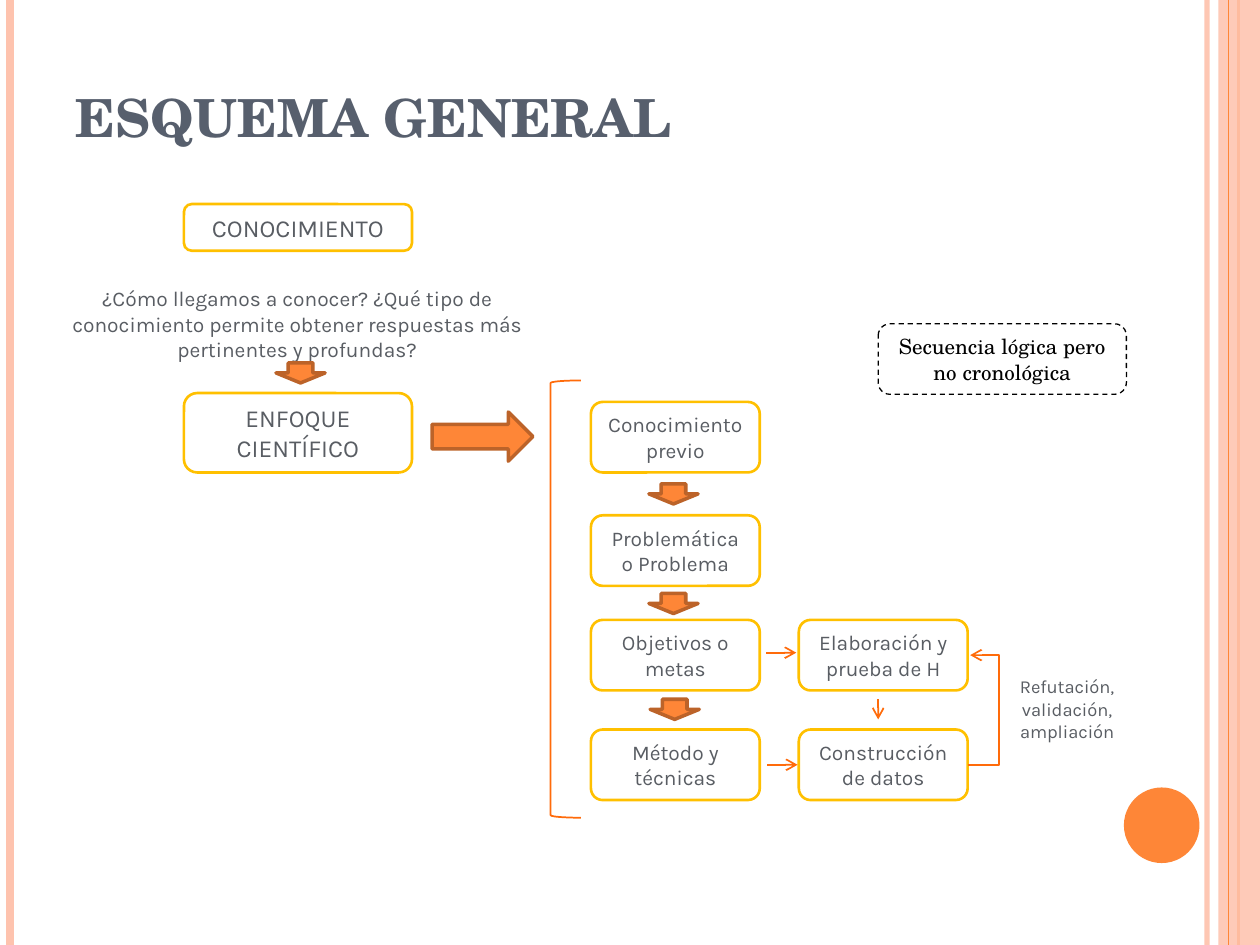
from dataclasses import dataclass
from typing import Optional

import pptx
import pptx.dml.color
import pptx.enum.dml
import pptx.enum.shapes
import pptx.enum.text
import pptx.oxml
import pptx.oxml.ns
import pptx.util

SHAPES = pptx.enum.shapes.MSO_SHAPE
CONNECTORS = pptx.enum.shapes.MSO_CONNECTOR


@dataclass(frozen=True)
class Theme:
    orange: str = "FE8637"
    dark_orange: str = "BC6329"
    bright_orange: str = "FF6B0A"
    peach: str = "FEC3AE"
    gold: str = "FFC000"
    slate: str = "575F6D"
    gray: str = "595D63"
    black: str = "000000"
    sans: str = "Karla"
    serif: str = "TeX Gyre Schola"
    title: float = 30
    large: float = 14
    body: float = 12
    small: float = 10.5


THEME = Theme()
# The grid has 100 columns and 75 rows
COLUMNS, ROWS = 100, 75
WIDTH, HEIGHT = pptx.util.Inches(10), pptx.util.Inches(7.5)


@dataclass(frozen=True)
class Area:
    column: float
    row: float
    columns: float
    rows: float


@dataclass(frozen=True)
class Label:
    text: str
    area: Area
    size: float = THEME.body
    outline: Optional[str] = THEME.gold
    weight: float = 1.5
    dashed: bool = False
    font: str = THEME.sans
    color: str = THEME.gray


@dataclass(frozen=True)
class Rail:
    column: float
    color: str
    weight: float
    opacity: int = 100


def x(columns: float) -> int:
    return round(WIDTH * columns / COLUMNS)


def y(rows: float) -> int:
    return round(HEIGHT * rows / ROWS)


def rgb(color: str) -> pptx.dml.color.RGBColor:
    return pptx.dml.color.RGBColor.from_string(color)


def set_opacity(element, percent: int) -> None:
    for color in element.iter(pptx.oxml.ns.qn("a:srgbClr")):
        alpha = color.makeelement(pptx.oxml.ns.qn("a:alpha"), {"val": str(percent * 1000)})
        color.append(alpha)


def draw_shape(page, kind, area: Area, fill: Optional[str] = None,
               outline: Optional[str] = None, weight: float = 1):
    shape = page.shapes.add_shape(kind, x(area.column), y(area.row), x(area.columns), y(area.rows))
    shape.shadow.inherit = False
    if fill:
        shape.fill.solid()
        shape.fill.fore_color.rgb = rgb(fill)
    else:
        shape.fill.background()
    if outline:
        shape.line.color.rgb = rgb(outline)
        shape.line.width = pptx.util.Pt(weight)
    else:
        shape.line.fill.background()
    return shape


def draw_label(page, label: Label) -> None:
    box = draw_shape(page, SHAPES.ROUNDED_RECTANGLE, label.area, None, label.outline, label.weight)
    if label.dashed:
        box.line.dash_style = pptx.enum.dml.MSO_LINE.DASH
    frame = box.text_frame
    frame.word_wrap = True
    frame.vertical_anchor = pptx.enum.text.MSO_ANCHOR.MIDDLE
    para = frame.paragraphs[0]
    para.text = label.text
    para.alignment = pptx.enum.text.PP_ALIGN.CENTER
    set_font(para, label.font, label.size, label.color)


def set_font(para, name: str, size: float, color: str) -> None:
    para.font.name = name
    para.font.size = pptx.util.Pt(size)
    para.font.color.rgb = rgb(color)


def draw_line(page, start: tuple[float, float], end: tuple[float, float], color: str,
              weight: float = 1, arrow: bool = False, kind=CONNECTORS.STRAIGHT):
    line = page.shapes.add_connector(kind, x(start[0]), y(start[1]), x(end[0]), y(end[1]))
    line.line.color.rgb = rgb(color)
    line.line.width = pptx.util.Pt(weight)
    properties = line._element.spPr
    if arrow:
        stroke = line.line._get_or_add_ln()
        stroke.append(stroke.makeelement(pptx.oxml.ns.qn("a:tailEnd"), {"type": "arrow"}))
    properties.append(properties.makeelement(pptx.oxml.ns.qn("a:effectLst"), {}))
    return line


def draw_frame(page) -> None:
    rails = (Rail(95.8, THEME.peach, 3, 93), Rail(0.8, THEME.peach, 4.5),
             Rail(98.3, THEME.orange, 1.5), Rail(97.5, THEME.orange, 0.75))
    for rail in rails[:3]:
        draw_rail(page, rail)
    band = draw_shape(page, SHAPES.RECTANGLE, Area(96.7, 0, 3.3, ROWS), THEME.peach)
    set_opacity(band._element.spPr, 87)
    draw_rail(page, rails[3])
    draw_shape(page, SHAPES.OVAL, Area(89.2, 62.5, 6, 6), THEME.orange)


def draw_rail(page, rail: Rail) -> None:
    line = draw_line(page, (rail.column, 0), (rail.column, ROWS), rail.color, rail.weight)
    if rail.opacity < 100:
        set_opacity(line._element.spPr, rail.opacity)


def draw_title(page) -> None:
    box = page.shapes.add_textbox(x(5), y(3), x(81.7), y(12.5))
    box.text_frame.word_wrap = True
    box.text_frame.vertical_anchor = pptx.enum.text.MSO_ANCHOR.MIDDLE
    para = box.text_frame.paragraphs[0]
    para.text = "ESQUEMA GENERAL"
    set_font(para, THEME.serif, THEME.title, THEME.slate)
    para.font.bold = True


def draw_labels(page) -> None:
    # Starting ideas, side notes
    labels = [
        Label("CONOCIMIENTO", Area(14.6, 16.2, 18.1, 3.7), THEME.large),
        Label("ENFOQUE CIENTÍFICO", Area(14.6, 31.2, 18.1, 6.3), THEME.large),
        Label("¿Cómo llegamos a conocer? ¿Qué tipo de conocimiento permite obtener "
              "respuestas más pertinentes y profundas?",
              Area(4.3, 21.8, 38.6, 7.8), outline=None),
        Label("Refutación, validación, ampliación", Area(78.4, 52.6, 12.6, 7.3),
              THEME.small, outline=None),
        Label("Secuencia lógica pero no cronológica", Area(69.7, 25.7, 19.7, 5.6),
              outline=THEME.black, weight=0.75, dashed=True,
              font=THEME.serif, color=THEME.black),
    ]
    # Research steps: one row each, in one or two columns
    steps = ((31.9, ("Conocimiento previo",)),
             (40.9, ("Problemática o Problema",)),
             (49.2, ("Objetivos o metas", "Elaboración y prueba de H")),
             (57.9, ("Método y técnicas", "Construcción de datos")))
    for row, texts in steps:
        for index, text in enumerate(texts):
            labels.append(Label(text, Area(46.9 + 16.5 * index, row, 13.4, 5.6)))
    for label in labels:
        draw_label(page, label)


def draw_arrows(page) -> None:
    # Block arrows
    for column, row in ((21.9, 28.8), (51.5, 38.4), (51.5, 47.1), (51.6, 55.5)):
        draw_shape(page, SHAPES.DOWN_ARROW, Area(column, row, 3.9, 1.6),
                   THEME.orange, THEME.dark_orange, 2)
    draw_shape(page, SHAPES.RIGHT_ARROW, Area(34.3, 32.7, 8, 3.9),
               THEME.orange, THEME.dark_orange, 2)
    # Thin arrows
    for start, end in (((60.8, 51.8), (63.2, 51.8)), ((60.9, 60.7), (63.3, 60.7)),
                       ((69.7, 55.5), (69.7, 57.1))):
        draw_line(page, start, end, THEME.bright_orange, arrow=True)
    # Feedback loop, bending 2.5 columns to the right of the boxes
    start, end, bend = (76.8, 60.7), (77, 52), 2.5
    loop = draw_line(page, start, end, THEME.bright_orange, arrow=True, kind=CONNECTORS.ELBOW)
    guides = loop._element.spPr.prstGeom.get_or_add_avLst()
    ratio = round(100000 * bend / (end[0] - start[0]))
    guides.append(guides.makeelement(pptx.oxml.ns.qn("a:gd"),
                                     {"name": "adj1", "fmla": f"val {ratio}"}))
    draw_shape(page, SHAPES.LEFT_BRACKET, Area(43.7, 30.2, 2.4, 34.7),
               None, THEME.bright_orange)


def main() -> None:
    deck = pptx.Presentation()
    deck.slide_width, deck.slide_height = WIDTH, HEIGHT
    page = deck.slides.add_slide(deck.slide_layouts[6])
    draw_frame(page)
    draw_title(page)
    draw_labels(page)
    draw_arrows(page)
    deck.save("out.pptx")


if __name__ == "__main__":
    main()
